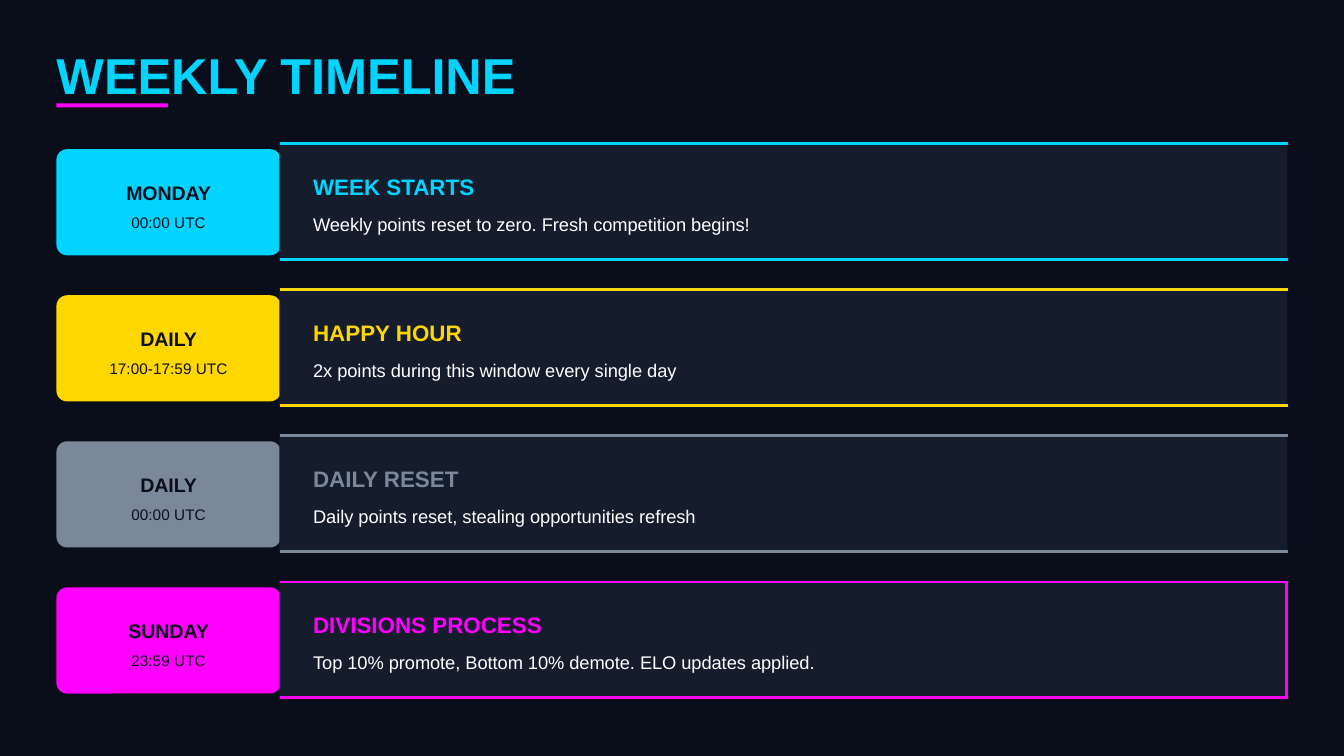
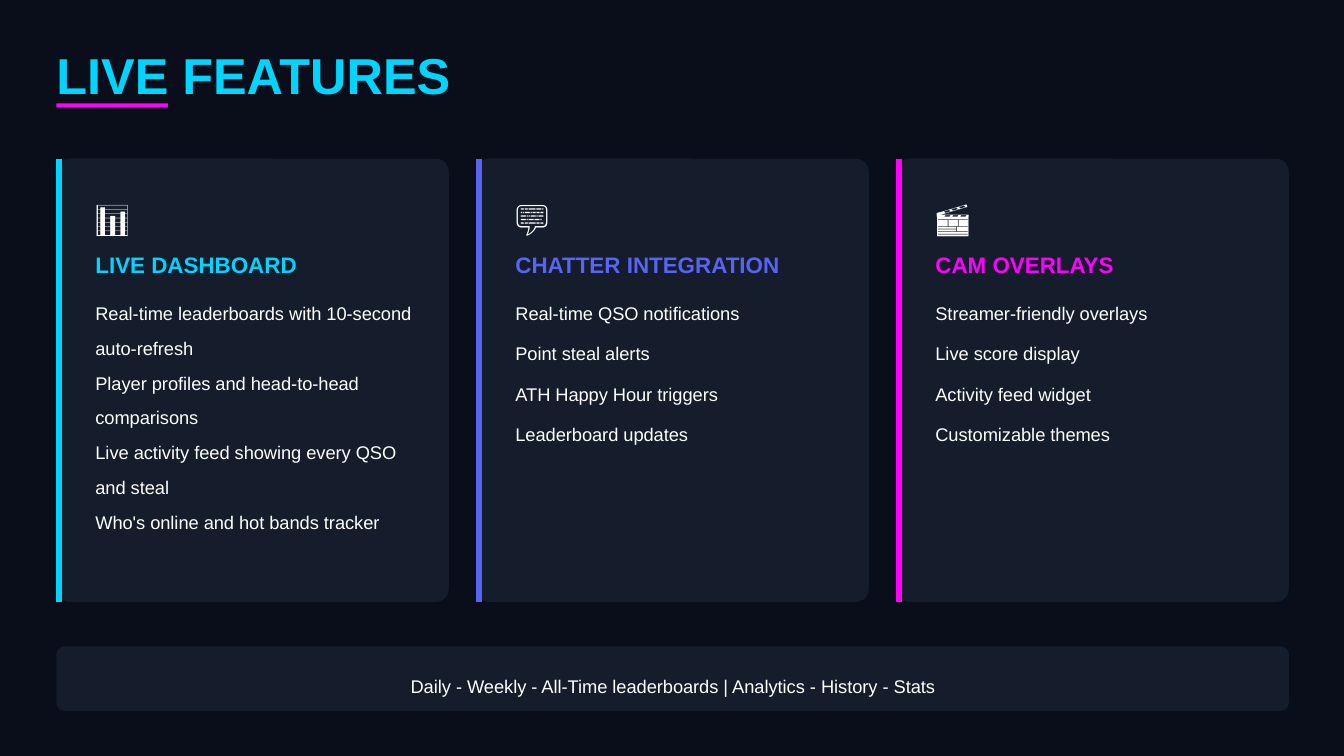
"""Build the weekly timeline and live features slides."""
from lxml.etree import SubElement
from pptx import Presentation
from pptx.dml.color import RGBColor
from pptx.enum.shapes import MSO_CONNECTOR, MSO_SHAPE
from pptx.enum.text import MSO_ANCHOR, MSO_AUTO_SIZE, PP_ALIGN
from pptx.oxml.ns import qn
from pptx.util import Inches, Pt

COLORS = {
    "night": "0A0E1A",
    "panel": "151C2C",
    "cyan": "00D4FF",
    "magenta": "FF00FF",
    "gold": "FFD700",
    "slate": "7A8899",
    "indigo": "5865F2",
    "white": "FFFFFF",
}
FONT = "Arial"
BODY_SIZE = 9.75
LEFT = 0.42
CONTENT_WIDTH = 9.17


def write(slide, text, box, placeholder=None, size=BODY_SIZE, color="white",
          bold=False, align=PP_ALIGN.LEFT, spacing=1.0, gap=0):
    """Write text, one paragraph per line, in a placeholder or a new text box."""
    left, top, width, height = [Inches(value) for value in box]
    if placeholder is None:
        shape = slide.shapes.add_textbox(left, top, width, height)
    else:
        shape = placeholder
        shape.left, shape.top, shape.width, shape.height = left, top, width, height
        shape.element.getparent().append(shape.element)
    frame = shape.text_frame
    frame.text = text
    frame.word_wrap = True
    frame.auto_size = MSO_AUTO_SIZE.NONE
    frame.vertical_anchor = MSO_ANCHOR.TOP
    frame.margin_left = frame.margin_top = frame.margin_right = frame.margin_bottom = 0
    for paragraph in frame.paragraphs:
        paragraph.alignment = align
        paragraph.line_spacing = spacing
        paragraph.space_before = Pt(0)
        paragraph.space_after = Pt(gap)
        if placeholder is not None:
            properties = paragraph._p.get_or_add_pPr()
            properties.set("marL", "0")
            properties.set("indent", "0")
            SubElement(properties, qn("a:buNone"))
        for run in paragraph.runs:
            run.font.name = FONT
            run.font.size = Pt(size)
            run.font.bold = bold
            run.font.color.rgb = RGBColor.from_string(COLORS[color])


def draw(slide, box, color, radius=0, weight=0):
    """Draw a filled box, or a line of the given weight along the box's extent."""
    left, top, width, height = [Inches(value) for value in box]
    rgb = RGBColor.from_string(COLORS[color])
    if weight:
        line = slide.shapes.add_connector(
            MSO_CONNECTOR.STRAIGHT, left, top, left + width, top + height)
        line.line.color.rgb = rgb
        line.line.width = Pt(weight)
        SubElement(line.element.spPr, qn("a:effectLst"))
        return
    kind = MSO_SHAPE.ROUNDED_RECTANGLE if radius else MSO_SHAPE.RECTANGLE
    shape = slide.shapes.add_shape(kind, left, top, width, height)
    if radius:
        shape.adjustments[0] = radius / min(box[2:])
    shape.shadow.inherit = False
    shape.fill.solid()
    shape.fill.fore_color.rgb = rgb
    shape.line.fill.background()


presentation = Presentation()
presentation.slide_width = Inches(10)
presentation.slide_height = Inches(10 * 9 / 16)
background = presentation.slide_master.background.fill
background.solid()
background.fore_color.rgb = RGBColor.from_string(COLORS["night"])

slides = []
for layout_name, title in [("Title Only", "WEEKLY TIMELINE"), ("Comparison", "LIVE FEATURES")]:
    slide = presentation.slides.add_slide(presentation.slide_layouts.get_by_name(layout_name))
    write(slide, title, (LEFT, 0.33, 4.69, 0.38), placeholder=slide.shapes.title,
          size=27, color="cyan", bold=True)
    draw(slide, (LEFT, 0.77, 0.83, 0.03), "magenta")
    slides.append(slide)
timeline, features = slides

EVENTS = [
    ("MONDAY", "00:00 UTC", "cyan", "WEEK STARTS",
     "Weekly points reset to zero. Fresh competition begins!"),
    ("DAILY", "17:00-17:59 UTC", "gold", "HAPPY HOUR",
     "2x points during this window every single day"),
    ("DAILY", "00:00 UTC", "slate", "DAILY RESET",
     "Daily points reset, stealing opportunities refresh"),
    ("SUNDAY", "23:59 UTC", "magenta", "DIVISIONS PROCESS",
     "Top 10% promote, Bottom 10% demote. ELO updates applied."),
]
PANEL_LEFT, PANEL_WIDTH, PANEL_HEIGHT = 2.08, 7.5, 0.88
for index, (day, time, color, heading, detail) in enumerate(EVENTS):
    top = 1.06 + 3.26 * index / 3
    draw(timeline, (LEFT, top + 0.05, 1.67, 0.79), color, radius=0.08)
    write(timeline, day, (0.66, top + 0.25, 1.19, 0.17), size=10.5, color="night",
          bold=True, align=PP_ALIGN.CENTER, spacing=1.2)
    write(timeline, time, (0.66, top + 0.47, 1.19, 0.16), size=8.25, color="night",
          align=PP_ALIGN.CENTER, spacing=1.4)
    draw(timeline, (PANEL_LEFT, top, PANEL_WIDTH, PANEL_HEIGHT), "panel")
    for edge in (0.01, PANEL_HEIGHT - 0.01):
        draw(timeline, (PANEL_LEFT, top + edge, PANEL_WIDTH, 0), color, weight=1.5)
    if index == len(EVENTS) - 1:
        draw(timeline, (PANEL_LEFT + PANEL_WIDTH - 0.01, top, 0, PANEL_HEIGHT),
             color, weight=1.5)
    write(timeline, heading, (2.33, top + 0.23, 7.14, 0.19), size=12, color=color, bold=True)
    write(timeline, detail, (2.33, top + 0.46, 7.14, 0.19), spacing=1.4)

CARDS = [
    ("📊", "LIVE DASHBOARD", "cyan", 0, [
        "Real-time leaderboards with 10-second auto-refresh",
        "Player profiles and head-to-head comparisons",
        "Live activity feed showing every QSO and steal",
        "Who's online and hot bands tracker",
    ]),
    ("💬", "CHATTER INTEGRATION", "indigo", 3, [
        "Real-time QSO notifications",
        "Point steal alerts",
        "ATH Happy Hour triggers",
        "Leaderboard updates",
    ]),
    ("🎬", "CAM OVERLAYS", "magenta", 3, [
        "Streamer-friendly overlays",
        "Live score display",
        "Activity feed widget",
        "Customizable themes",
    ]),
]
CARD_TOP, CARD_WIDTH, CARD_HEIGHT = 1.18, 2.92, 3.3
card_step = (CONTENT_WIDTH - CARD_WIDTH) / (len(CARDS) - 1)
*list_bodies, spare_body = list(features.placeholders)[1:]
spare_body.element.getparent().remove(spare_body.element)
for index, (icon, heading, color, gap, items) in enumerate(CARDS):
    left = LEFT + index * card_step
    text_left = left + 0.29
    draw(features, (left, CARD_TOP, CARD_WIDTH, CARD_HEIGHT), "panel", radius=0.1)
    draw(features, (left + 0.02, CARD_TOP, 0, CARD_HEIGHT), color, weight=3)
    write(features, icon, (text_left, 1.43, 1.22, 0.28), size=18, bold=True, spacing=1.11)
    write(features, heading, (text_left, 1.83, 2.42, 0.2), size=12, color=color,
          bold=True, spacing=1.2)
    write(features, "\n".join(items), (text_left, 2.15, 2.42, 1.8),
          placeholder=list_bodies[index], spacing=1.6, gap=gap)

draw(features, (LEFT, 4.81, CONTENT_WIDTH, 0.48), "panel", radius=0.06)
write(features, "Daily - Weekly - All-Time leaderboards | Analytics - History - Stats",
      (0.54, 4.96, 8.93, 0.19), align=PP_ALIGN.CENTER, spacing=1.4)

presentation.save("out.pptx")
